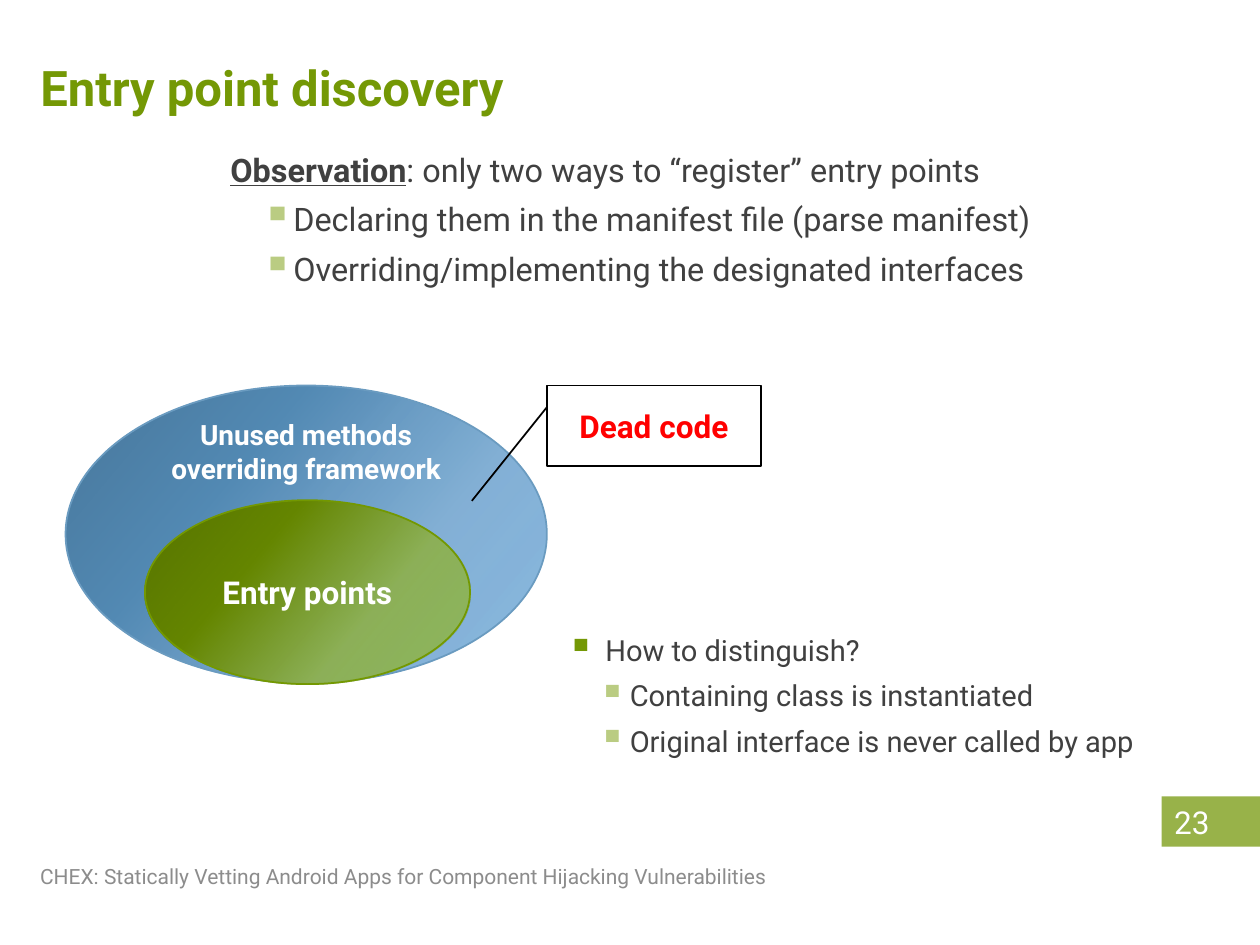
"""Build the slide on entry point discovery."""
from lxml import etree
from pptx import Presentation
from pptx.dml.color import RGBColor
from pptx.enum import shapes, text
from pptx.oxml import ns
from pptx.util import Inches, Pt

FONT = "Roboto"
GREEN = RGBColor(0x74, 0x98, 0x05)
LEAF = RGBColor(0x73, 0x98, 0x01)
PALE = RGBColor(0xBA, 0xCC, 0x82)
TAG = RGBColor(0x98, 0xB2, 0x49)
BLUE = RGBColor(0x6A, 0x9B, 0xC0)
DARK = RGBColor(0x40, 0x40, 0x40)
GREY = RGBColor(0x8C, 0x8C, 0x8C)
RED = RGBColor(0xFF, 0, 0)
BLACK = RGBColor(0, 0, 0)
WHITE = RGBColor(0xFF, 0xFF, 0xFF)

TITLE = "Entry point discovery"
FOOTER = "CHEX: Statically Vetting Android Apps for Component Hijacking Vulnerabilities"
OBSERVATION = [
    (None, [("Observation", True), (": only two ways to “register” entry points", False)]),
    (1, [("Declaring them in the manifest file (parse manifest)", False)]),
    (1, [("Overriding/implementing the designated interfaces", False)]),
]
QUESTION = [
    (0, [(" How to distinguish?", False)]),
    (1, [("Containing class is instantiated", False)]),
    (1, [("Original interface is never called by app", False)]),
]
BULLET_COLORS = (GREEN, PALE)
INDENT = Inches(0.25)
SETS = [
    ("Unused methods overriding framework", 16, (0.52, 3.06, 3.82, 2.36), BLUE, text.MSO_ANCHOR.TOP,
     [(0, "76ADDA", 85), (33, "7DACD3", 95), (67, "5289B3", 100), (100, "47769A", 100)]),
    ("Entry points", 18, (1.15, 3.97, 2.58, 1.46), LEAF, text.MSO_ANCHOR.MIDDLE,
     [(0, "8FB84C", 85), (33, "8EB153", 95), (67, "668600", 100), (100, "587400", 100)]),
]


def style(font, size, color, bold=False):
    font.name, font.size, font.bold = FONT, Pt(size), bold
    font.color.rgb = color


def write(box, words, size, color, bold=False, align=text.PP_ALIGN.LEFT, anchor=text.MSO_ANCHOR.MIDDLE):
    frame = box.text_frame
    frame.word_wrap = True
    frame.vertical_anchor = anchor
    frame.text = words
    para = frame.paragraphs[0]
    para.alignment = align
    style(para.runs[0].font, size, color, bold)


def add_box(page, place):
    return page.shapes.add_textbox(*map(Inches, place))


def add_shape(page, kind, place):
    shape = page.shapes.add_shape(kind, *map(Inches, place))
    shape.shadow.inherit = False
    return shape


def add_bullet(para, level):
    para.level = level
    props = para._p.get_or_add_pPr()
    props.set("marL", str(INDENT * (level + 1)))
    props.set("indent", str(-INDENT))
    color = etree.SubElement(props, ns.qn("a:buClr"))
    etree.SubElement(color, ns.qn("a:srgbClr"), val=str(BULLET_COLORS[level]))
    etree.SubElement(props, ns.qn("a:buSzPct"), val="130000")
    etree.SubElement(props, ns.qn("a:buChar"), char="▪")


def add_list(page, place, items, size):
    frame = add_box(page, place).text_frame
    frame.word_wrap = True
    for index, (level, spans) in enumerate(items):
        para = frame.add_paragraph() if index else frame.paragraphs[0]
        if index:
            para.space_before = Pt(6)
        if level is not None:
            add_bullet(para, level)
        for words, strong in spans:
            span = para.add_run()
            span.text = words
            style(span.font, size, DARK, strong)
            span.font.underline = strong


def fill_gradient(shape, stops, angle=220):
    shape.fill.gradient()
    gradient = shape._element.spPr.find(ns.qn("a:gradFill"))
    stop_list = gradient.find(ns.qn("a:gsLst"))
    for stop in list(stop_list):
        stop_list.remove(stop)
    for position, color, opacity in stops:
        stop = etree.SubElement(stop_list, ns.qn("a:gs"), pos=str(position * 1000))
        shade = etree.SubElement(stop, ns.qn("a:srgbClr"), val=color)
        if opacity < 100:
            etree.SubElement(shade, ns.qn("a:alpha"), val=str(opacity * 1000))
    gradient.find(ns.qn("a:lin")).set("ang", str(angle * 60000))


def main():
    deck = Presentation()
    deck.slide_width, deck.slide_height = Inches(10), Inches(7.5)
    page = deck.slides.add_slide(deck.slide_layouts[5])

    title = page.shapes.title
    title.left, title.top, title.width, title.height = map(Inches, (0.22, 0, 8.56, 0.97))
    write(title, TITLE, 28, GREEN, True, anchor=text.MSO_ANCHOR.BOTTOM)

    add_list(page, (1.73, 1.14, 7.49, 1.7), OBSERVATION, 18.5)
    write(add_box(page, (0.22, 6.75, 6.84, 0.4)), FOOTER, 12, GREY)

    number = add_shape(page, shapes.MSO_SHAPE.RECTANGLE, (9.22, 6.32, 0.78, 0.4))
    number.fill.solid()
    number.fill.fore_color.rgb = TAG
    number.line.fill.background()
    write(number, "23", 18, WHITE)

    for words, size, place, edge, anchor, stops in SETS:
        oval = add_shape(page, shapes.MSO_SHAPE.OVAL, place)
        fill_gradient(oval, stops)
        oval.line.color.rgb, oval.line.width = edge, Pt(1)
        write(oval, words, size, WHITE, True, text.PP_ALIGN.CENTER, anchor)
        if anchor == text.MSO_ANCHOR.TOP:
            oval.text_frame.margin_top = Inches(-0.09)

    callout = add_shape(page, shapes.MSO_SHAPE.LINE_CALLOUT_1, (4.34, 3.06, 1.7, 0.64))
    for index, share in enumerate((0.27, 0, 1.43, -0.35)):
        callout.adjustments[index] = share
    callout.fill.background()
    callout.line.color.rgb, callout.line.width = BLACK, Pt(1)
    write(callout, "Dead code", 18, RED, True, text.PP_ALIGN.CENTER)

    add_list(page, (4.4, 4.97, 5.6, 1.31), QUESTION, 16.6)
    deck.save("out.pptx")


if __name__ == "__main__":
    main()
